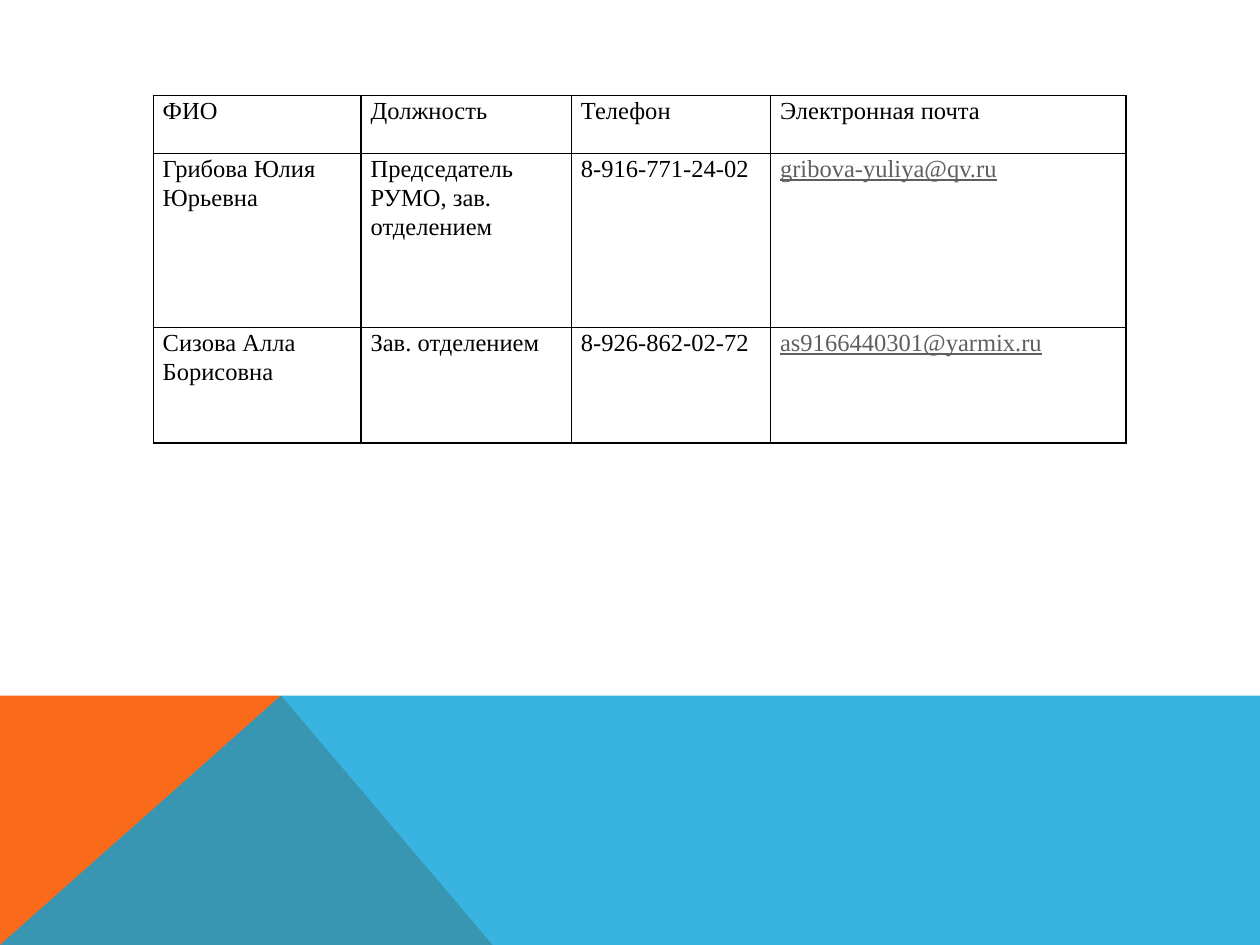
import pptx
import pptx.util
import pptx.dml.color
import pptx.oxml
import pptx.oxml.ns
from lxml import etree

Pt = pptx.util.Pt
RGB = pptx.dml.color.RGBColor.from_string


class Theme:
    ink = "000000"
    link = "5F5F5F"
    warm = "F96A1B"
    cool = "08A1D9"
    alpha = 80
    font = "Times New Roman"
    size = 14
    rule = 1


ROWS = [
    ["ФИО", "Должность", "Телефон", "Электронная почта"],
    ["Грибова Юлия Юрьевна", "Председатель РУМО, зав. отделением",
     "8-916-771-24-02", "gribova-yuliya@qv.ru"],
    ["Сизова Алла Борисовна", "Зав. отделением",
     "8-926-862-02-72", "as9166440301@yarmix.ru"],
]
WIDTHS = [118.8, 120.24, 113.76, 203.04]
UNIT = 33.12
LINES = [1, 3, 2]  # row heights in units


def apply(item, form):
    for name, value in form.items():
        setattr(item, name, value)


def draw_shape(slide, points, color, alpha=100):
    pen = slide.shapes.build_freeform(*map(Pt, points[0]))
    pen.add_line_segments([(Pt(x), Pt(y)) for x, y in points[1:]])
    shape = pen.convert_to_shape()
    shape.shadow.inherit = False
    shape.line.fill.background()
    shape.fill.solid()
    shape.fill.fore_color.rgb = RGB(color)
    if alpha < 100:
        tint = shape.fill._xPr.find(".//" + pptx.oxml.ns.qn("a:srgbClr"))
        etree.SubElement(tint, pptx.oxml.ns.qn("a:alpha"), val=str(alpha * 1000))


def draw_band(slide, left, top, width, height):
    peak = (left + 160.6, top)
    base = top + height
    # Orange slope
    draw_shape(slide, [(left, base), (left, top), peak, (left + 281.5, base)],
               Theme.warm)
    # Translucent blue field
    draw_shape(slide, [(left, base), peak, (left + width, top),
                       (left + width, base)], Theme.cool, Theme.alpha)


def frame_cell(cell):
    space = pptx.oxml.ns.nsdecls("a")
    props = cell._tc.get_or_add_tcPr()
    for side in "LRTB":
        props.append(pptx.oxml.parse_xml(
            f'<a:ln{side} {space} w="{Pt(Theme.rule)}"><a:solidFill>'
            f'<a:srgbClr val="{Theme.ink}"/></a:solidFill></a:ln{side}>'))
    cell.fill.background()


def fill_cell(cell, text):
    mail = "@" in text
    apply(cell, {"margin_left": Pt(5.4), "margin_right": Pt(5.4),
                 "margin_top": 0, "margin_bottom": 0})
    par = cell.text_frame.paragraphs[0]
    par.line_spacing = 1.07
    run = par.add_run()
    run.text = text
    apply(run.font, {"name": Theme.font, "size": Pt(Theme.size),
                     "underline": mail})
    run.font.color.rgb = RGB(Theme.link if mail else Theme.ink)
    frame_cell(cell)


def draw_table(slide, left, top, width, height):
    table = slide.shapes.add_table(
        len(ROWS), len(WIDTHS), Pt(left), Pt(top), Pt(width), Pt(height)).table
    apply(table, {"first_row": False, "horz_banding": False})
    for col, size in zip(table.columns, WIDTHS):
        col.width = Pt(size)
    for row, count, texts in zip(table.rows, LINES, ROWS):
        row.height = Pt(UNIT * count)
        for cell, text in zip(row.cells, texts):
            fill_cell(cell, text)


def main():
    deck = pptx.Presentation()
    apply(deck, {"slide_width": Pt(720), "slide_height": Pt(540)})
    slide = deck.slides.add_slide(deck.slide_layouts[6])
    draw_band(slide, 0, 397.5, 720, 142.5)
    draw_table(slide, 87.6, 54.6, sum(WIDTHS), UNIT * sum(LINES))
    deck.save("out.pptx")


if __name__ == "__main__":
    main()
